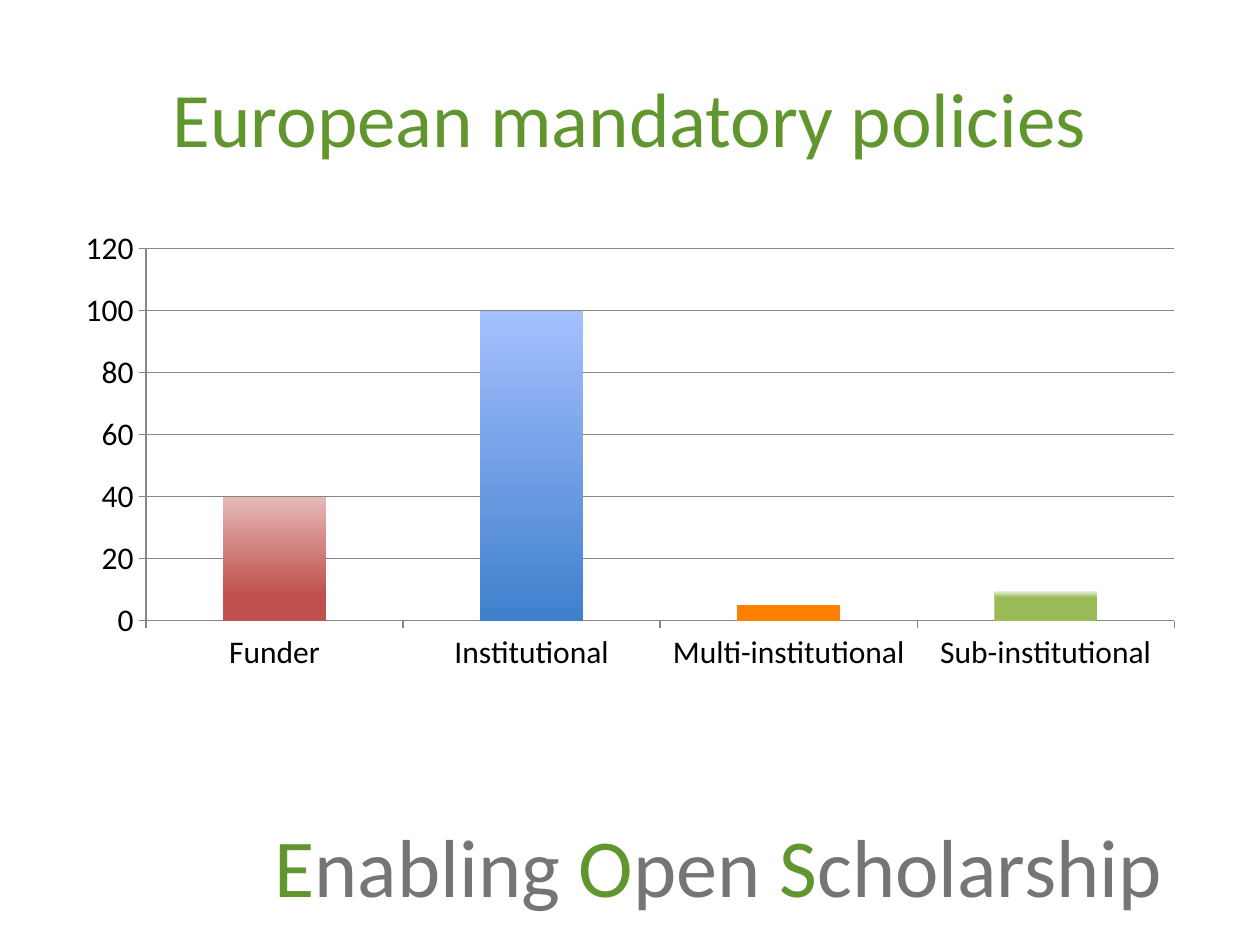
from pptx import Presentation
from pptx.chart.data import CategoryChartData
from pptx.dml.color import RGBColor
from pptx.enum.chart import XL_CHART_TYPE, XL_TICK_MARK
from pptx.enum.text import MSO_ANCHOR, PP_ALIGN
from pptx.util import Inches, Pt

FONT = "Calibri"
GREEN = "61952D"
GREY = "757575"
AXIS_GREY = "868686"

# Category, value, fill: one colour, or (position, colour) stops from the bottom up
POLICIES = [
    ("Funder", 40, [(0.21, "C0504D"), (1, "E6B9B8")]),
    ("Institutional", 100, [(0, "3F80CD"), (1, "A5C0FF")]),
    ("Multi-institutional", 5, "FF8000"),
    ("Sub-institutional", 10, [(0.75, "9BBB59"), (1, "FFFFFF")]),
]


def color(hex_string):
    return RGBColor.from_string(hex_string)


def add_text(slide, left, top, width, height, runs, size, align, anchor):
    shape = slide.shapes.add_textbox(
        Inches(left), Inches(top), Inches(width), Inches(height))
    frame = shape.text_frame
    frame.word_wrap = True
    frame.vertical_anchor = anchor
    paragraph = frame.paragraphs[0]
    paragraph.alignment = align
    paragraph.font.size = Pt(size)
    paragraph.font.name = FONT
    for text, run_color in runs:
        run = paragraph.add_run()
        run.text = text
        run.font.color.rgb = color(run_color)


def fill_bar(fill, paint):
    if isinstance(paint, str):
        fill.solid()
        fill.fore_color.rgb = color(paint)
        return
    fill.gradient()
    fill.gradient_angle = 90
    for stop, (position, stop_color) in zip(fill.gradient_stops, paint):
        stop.position = position
        stop.color.rgb = color(stop_color)


def style_line(line):
    line.color.rgb = color(AXIS_GREY)
    line.width = Pt(0.75)


def add_policy_chart(slide):
    names, values, paints = zip(*POLICIES)
    data = CategoryChartData()
    data.categories = names
    data.add_series("Series 1", values)
    chart = slide.shapes.add_chart(
        XL_CHART_TYPE.COLUMN_CLUSTERED, Inches(0.5), Inches(1.75),
        Inches(9), Inches(3.65), data).chart
    chart.has_legend = False
    chart.has_title = False
    chart.font.size = Pt(18)
    chart.font.name = FONT
    chart.font.color.rgb = color("000000")

    # Axes
    for axis in (chart.category_axis, chart.value_axis):
        axis.major_tick_mark = XL_TICK_MARK.OUTSIDE
        axis.minor_tick_mark = XL_TICK_MARK.NONE
        style_line(axis.format.line)
    chart.value_axis.minimum_scale = 0
    chart.value_axis.maximum_scale = 120
    chart.value_axis.major_unit = 20
    chart.value_axis.has_major_gridlines = True
    style_line(chart.value_axis.major_gridlines.format.line)

    # Bars
    plot = chart.plots[0]
    plot.gap_width = 150
    plot.vary_by_categories = False
    series = plot.series[0]
    fill_bar(series.format.fill, "4F81BD")
    for index, paint in enumerate(paints):
        fill_bar(series.points[index].format.fill, paint)


def main():
    presentation = Presentation()
    presentation.slide_width = Inches(10)
    presentation.slide_height = Inches(7.5)
    slide = presentation.slides.add_slide(presentation.slide_layouts[6])

    # Footer name with green initials
    footer_runs = []
    for word in ("Enabling ", "Open ", "Scholarship"):
        footer_runs += [(word[0], GREEN), (word[1:], GREY)]
    add_text(slide, 2.08, 6.42, 7.67, 0.89, footer_runs, 47,
             PP_ALIGN.LEFT, MSO_ANCHOR.TOP)

    # Title
    add_text(slide, 0.5, 0.3, 9, 1.25, [("European mandatory policies", GREEN)],
             44, PP_ALIGN.CENTER, MSO_ANCHOR.MIDDLE)

    add_policy_chart(slide)
    presentation.save("out.pptx")


if __name__ == "__main__":
    main()
